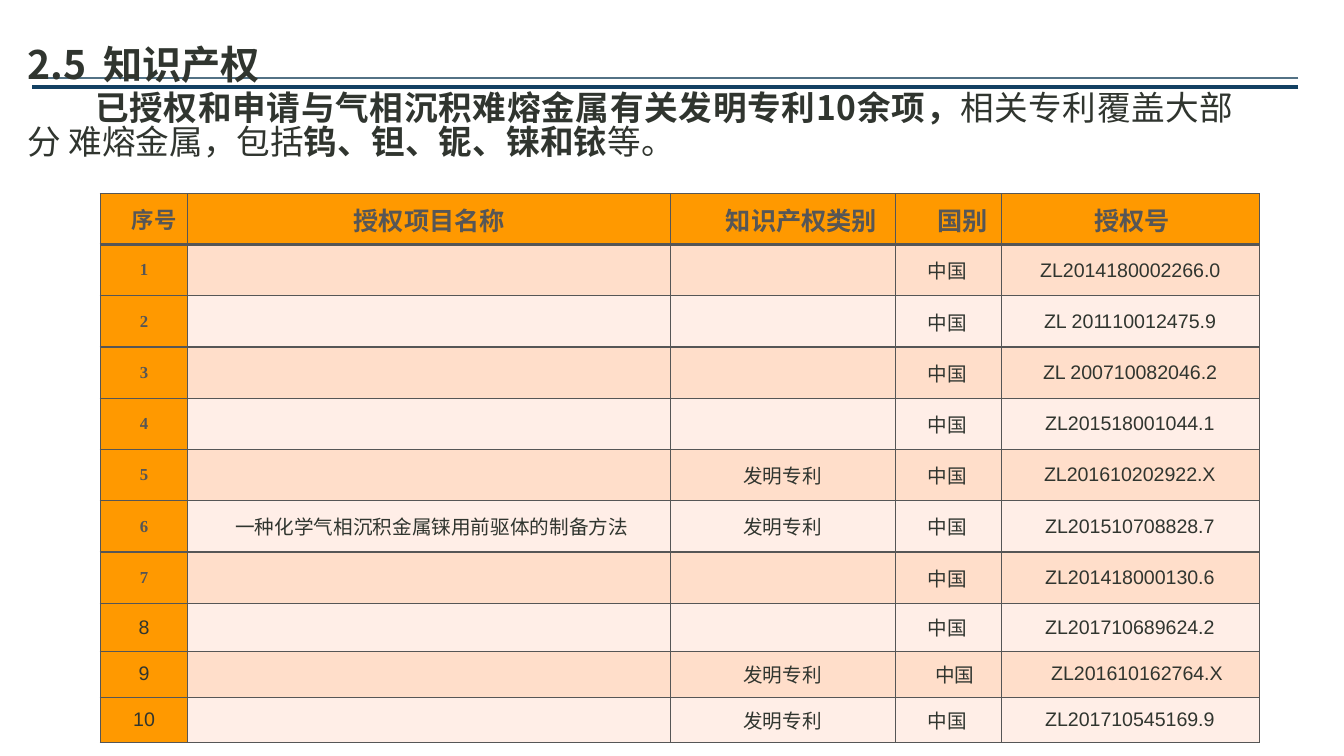
"""Builds the slide on intellectual property with its table of granted patents."""
from dataclasses import dataclass

from lxml import etree
from pptx import Presentation
from pptx.dml.color import RGBColor
from pptx.enum.shapes import MSO_CONNECTOR
from pptx.enum.text import MSO_ANCHOR, PP_ALIGN
from pptx.oxml.ns import qn
from pptx.util import Pt

STRAIGHT = MSO_CONNECTOR.STRAIGHT
MIDDLE = MSO_ANCHOR.MIDDLE
LEFT, CENTER = PP_ALIGN.LEFT, PP_ALIGN.CENTER

COLORS = {
    "text": "30352F",
    "grey": "565656",
    "orange": "FF9900",
    "peach": "FFDECA",
    "blush": "FFEEE7",
    "thin_rule": "537285",
    "thick_rule": "124062",
}
SANS, SANS_TC = "Noto Sans CJK SC", "Noto Sans CJK TC"
ARIAL, TIMES = "Arial", "Times New Roman"
NO_MARGINS = {f"margin_{side}": 0 for side in ("left", "top", "right", "bottom")}


@dataclass
class Run:
    text: str
    size: float
    font: str = SANS
    color: str = "text"
    bold: bool = False
    spacing: float = 0


@dataclass
class Rule:
    top: float
    color: str
    width: float


@dataclass
class Column:
    title: str
    width: float
    indent: float
    size: float = 18
    font: str = SANS


@dataclass
class Patent:
    code: str
    code_indent: float
    name: str = ""
    category: str = ""
    height: float = 36.6
    country_indent: float = 23
    tight: str = ""


RULES = [Rule(55.6, "thin_rule", 1), Rule(62.2, "thick_rule", 3)]
HEADING = [
    Run("2.5", 28, bold=True, spacing=-0.1),
    Run(" ", 28, bold=True, spacing=6),
    Run("知识产权", 28, bold=True, spacing=-0.1),
]
SUMMARY = [
    Run("已授权和申请与气相沉积难熔金属有关发明专利", 24, bold=True, spacing=0.55),
    Run("10余项，", 24, bold=True, spacing=0.5),
    Run("相关专利覆盖大部", 24, spacing=0.4),
    Run("分 难熔金属，包括", 24),
    Run("钨、钽、铌、铼和铱", 24, bold=True, spacing=0.1),
    Run("等。", 24),
]
COLUMNS = [
    Column("序号", 62.6, 14.4, 16, SANS_TC),
    Column("授权项目名称", 345, 0),
    Column("知识产权类别", 160.7, 25.9),
    Column("国别", 75.7, 19.4),
    Column("授权号", 184, 2.2),
]
HEADER_HEIGHT = 36.4
PATENTS = [
    Patent("ZL2014180002266.0", 27.4),
    Patent("ZL 201110012475.9", 30.2, tight="11"),
    Patent("ZL 200710082046.2", 29.5),
    Patent("ZL201518001044.1", 31),
    Patent("ZL201610202922.X", 30.2, category="发明专利"),
    Patent("ZL201510708828.7", 31, "一种化学气相沉积金属铼用前驱体的制备方法", "发明专利"),
    Patent("ZL201418000130.6", 31),
    Patent("ZL201710689624.2", 31, height=34.3),
    Patent("ZL201610162764.X", 35.3, category="发明专利", height=32.8, country_indent=28),
    Patent("ZL201710545169.9", 31, category="发明专利", height=32.6),
]


def rgb(name: str) -> RGBColor:
    return RGBColor.from_string(COLORS[name])


def apply(target, values: dict) -> None:
    for name, value in values.items():
        setattr(target, name, value)


def fill_paragraph(paragraph, runs: list[Run], indent: float = 0, first_line: float = 0) -> None:
    properties = paragraph._p.get_or_add_pPr()
    for name, value in {"marL": indent, "indent": first_line}.items():
        properties.set(name, str(int(Pt(value))))
    for item in runs:
        run = paragraph.add_run()
        run.text = item.text
        apply(run.font, {"name": item.font, "size": Pt(item.size), "bold": item.bold})
        run.font.color.rgb = rgb(item.color)
        run_properties = run._r.get_or_add_rPr()
        run_properties.set("spc", str(round(item.spacing * 100)))
        etree.SubElement(run_properties, qn("a:ea")).set("typeface", item.font)


def add_rule(slide, rule: Rule) -> None:
    connector = slide.shapes.add_connector(
        STRAIGHT, Pt(927.4), Pt(rule.top), Pt(22.6), Pt(rule.top))
    connector.line.color.rgb = rgb(rule.color)
    connector.line.width = Pt(rule.width)
    etree.SubElement(connector._element.spPr, qn("a:effectLst"))


def add_heading(slide) -> None:
    frame = slide.shapes.add_textbox(Pt(18.8), Pt(30.2), Pt(882), Pt(84.2)).text_frame
    apply(frame, {**NO_MARGINS, "word_wrap": True, "vertical_anchor": MIDDLE})
    fill_paragraph(frame.paragraphs[0], HEADING, 0.9)
    summary = frame.add_paragraph()
    apply(summary, {"space_before": Pt(4.1), "line_spacing": 0.85})
    fill_paragraph(summary, SUMMARY, 0.9, 48.2)


def style_cell(cell, fill: str, top: float = 1, bottom: float = 1) -> None:
    apply(cell, {**NO_MARGINS, "vertical_anchor": MIDDLE})
    cell.fill.solid()
    cell.fill.fore_color.rgb = rgb(fill)
    properties = cell._tc.get_or_add_tcPr()
    widths = {"lnL": 1, "lnR": 1, "lnT": top, "lnB": bottom}
    for position, (edge, width) in enumerate(widths.items()):
        line = etree.Element(qn(f"a:{edge}"), w=str(int(Pt(width))))
        solid = etree.SubElement(line, qn("a:solidFill"))
        etree.SubElement(solid, qn("a:srgbClr"), val=COLORS["grey"])
        properties.insert(position, line)


def write_cell(cell, runs: list[Run], indent: float = 0, alignment=CENTER) -> None:
    paragraph = cell.text_frame.paragraphs[0]
    paragraph.alignment = alignment
    fill_paragraph(paragraph, runs, indent)


def code_runs(patent: Patent) -> list[Run]:
    if not patent.tight:
        return [Run(patent.code, 14, ARIAL, spacing=-0.05)]
    before, tight, after = patent.code.partition(patent.tight)
    return [Run(before, 14, ARIAL), Run(tight, 14, ARIAL, spacing=-1.1), Run(after, 14, ARIAL)]


def add_patent_table(slide) -> None:
    heights = [HEADER_HEIGHT] + [patent.height for patent in PATENTS]
    widths = [column.width for column in COLUMNS]
    table = slide.shapes.add_table(
        len(heights), len(widths), Pt(71.6), Pt(138.3), Pt(sum(widths)), Pt(sum(heights))).table
    apply(table, {"first_row": False, "horz_banding": False})
    for row, height in zip(table.rows, heights):
        row.height = Pt(height)
    for index, column in enumerate(COLUMNS):
        table.columns[index].width = Pt(column.width)
        cell = table.cell(0, index)
        style_cell(cell, "orange", bottom=3)
        write_cell(cell, [Run(column.title, column.size, column.font, "grey", True)], column.indent)
    for number, patent in enumerate(PATENTS, 1):
        cells = [table.cell(number, index) for index in range(len(COLUMNS))]
        band = "peach" if number % 2 else "blush"
        for index, cell in enumerate(cells):
            style_cell(cell, band if index else "orange", top=3 if number == 1 else 1)
        label = str(number)
        write_cell(cells[0], [Run(label, 12, TIMES, "grey", True) if number < 8
                              else Run(label, 14, ARIAL)])
        if patent.name:
            write_cell(cells[1], [Run(patent.name, 14)], 3.6)
        if patent.category:
            write_cell(cells[2], [Run(patent.category, 14)], 51.8, LEFT)
        write_cell(cells[3], [Run("中国", 14)], patent.country_indent, LEFT)
        write_cell(cells[4], code_runs(patent), patent.code_indent, LEFT)


def main() -> None:
    presentation = Presentation()
    apply(presentation, {"slide_width": Pt(960), "slide_height": Pt(540)})
    slide = presentation.slides.add_slide(presentation.slide_layouts[6])
    for rule in RULES:
        add_rule(slide, rule)
    add_heading(slide)
    add_patent_table(slide)
    presentation.save("out.pptx")


if __name__ == "__main__":
    main()
